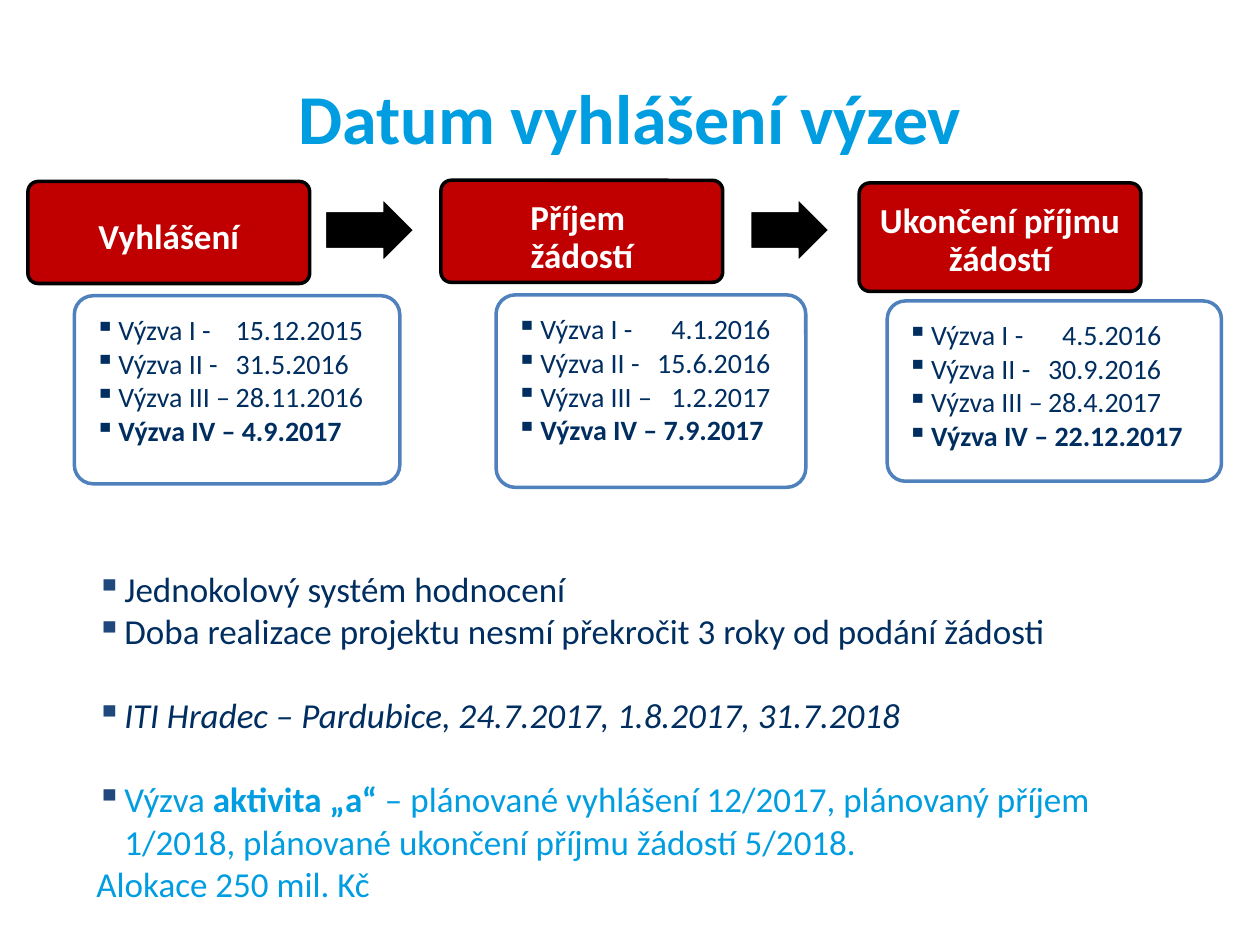
from dataclasses import dataclass
from typing import NamedTuple

from lxml import etree
from pptx import Presentation
from pptx.dml.color import RGBColor
from pptx.enum.shapes import MSO_SHAPE
from pptx.enum.text import MSO_ANCHOR, PP_ALIGN
from pptx.oxml.ns import qn
from pptx.util import Pt

ROUNDED, ARROW = MSO_SHAPE.ROUNDED_RECTANGLE, MSO_SHAPE.RIGHT_ARROW
TOP, MIDDLE = MSO_ANCHOR.TOP, MSO_ANCHOR.MIDDLE
LEFT, CENTER = PP_ALIGN.LEFT, PP_ALIGN.CENTER
TITLE_ONLY = 5


@dataclass(frozen=True)
class Theme:
    font: str = "Calibri"
    accent: str = "009DE0"
    navy: str = "002E60"
    bullet: str = "1F497D"
    red: str = "C00000"
    border: str = "4F81BD"
    black: str = "000000"
    white: str = "FFFFFF"
    title: float = 40
    large: float = 20
    small: float = 16


THEME = Theme()


class Box(NamedTuple):
    left: float
    top: float
    width: float
    height: float


class Tab(NamedTuple):
    pos: float
    align: str


class Stage(NamedTuple):
    heading: str
    header: Box
    header_inset: float
    card: Box
    tab: Tab
    dates: tuple[str, str, str]
    last_call: str


class Line(NamedTuple):
    phrases: tuple[tuple[str, dict], ...]
    bulleted: bool = True
    before: float = 0


STAGES = [
    Stage("Vyhlášení", Box(16, 103.7, 161, 58.3), 20,
          Box(42.5, 169, 186, 107.5), Tab(80.5, "l"),
          ("15.12.2015", "31.5.2016", "28.11.2016"), "4.9.2017"),
    Stage("Příjem \vžádostí", Box(252, 103, 161, 58.3), 9.8,
          Box(283.5, 168.5, 177, 110), Tab(145, "r"),
          ("4.1.2016", "15.6.2016", "1.2.2017"), "7.9.2017"),
    Stage("Ukončení příjmu žádostí", Box(491, 104.5, 161, 62), 9.8,
          Box(507, 172, 191, 103), Tab(145, "r"),
          ("4.5.2016", "30.9.2016", "28.4.2017"), "22.12.2017"),
]
CALLS = ("Výzva I -", "Výzva II -", "Výzva III –")
ARROWS = [Box(186, 113.8, 50.4, 35.3), Box(429, 113.8, 44.6, 35.3)]

BLUE = {"color": THEME.accent}
NOTES = [
    Line((("Jednokolový systém hodnocení", {}),)),
    Line((("Doba realizace projektu nesmí překročit 3 roky od podání žádosti", {}),)),
    Line((("ITI Hradec – Pardubice, 24.7.2017, 1.8.2017, 31.7.2018",
           {"italic": True}),), before=24),
    Line((("Výzva ", BLUE), ("aktivita „a“", {**BLUE, "bold": True}),
          (" – plánované vyhlášení 12/2017, plánovaný příjem 1/2018, "
           "plánované ukončení příjmu žádostí 5/2018.", BLUE)), before=24),
    Line((("Alokace 250 mil. Kč", BLUE),), bulleted=False),
]


def rgb(color: str) -> RGBColor:
    return RGBColor.from_string(color)


def add_text(p, text: str, *, size: float = THEME.large, color: str = THEME.navy,
             bold: bool = False, italic: bool = False) -> None:
    """Add text to a paragraph; a vertical tab becomes a line break."""
    for i, piece in enumerate(text.split("\v")):
        if i:
            p.add_line_break()
        r = p.add_run()
        r.text = piece
        r.font.name, r.font.size = THEME.font, Pt(size)
        r.font.bold, r.font.italic = bold, italic
        r.font.color.rgb = rgb(color)


def add_bullet(p, hang: float, color: str, tab: Tab | None = None) -> None:
    pPr = p._p.get_or_add_pPr()
    pPr.set("marL", str(Pt(hang)))
    pPr.set("indent", str(-Pt(hang)))
    bu_color = etree.SubElement(pPr, qn("a:buClr"))
    etree.SubElement(bu_color, qn("a:srgbClr"), val=color)
    etree.SubElement(pPr, qn("a:buChar"), char="▪")
    if tab:
        tabs = etree.SubElement(pPr, qn("a:tabLst"))
        etree.SubElement(tabs, qn("a:tab"), pos=str(Pt(tab.pos)), algn=tab.align)


def add_paragraph(tf, first: bool, align=LEFT):
    p = tf.paragraphs[0] if first else tf.add_paragraph()
    p.alignment = align
    return p


def set_frame(tf, left: float, top: float, right: float, bottom: float) -> None:
    tf.word_wrap = True
    tf.vertical_anchor = TOP
    tf.margin_left, tf.margin_top = Pt(left), Pt(top)
    tf.margin_right, tf.margin_bottom = Pt(right), Pt(bottom)


def add_shape(s, kind, box: Box, adjustments: tuple[float, ...], fill: str,
              line: str, weight: float):
    sp = s.shapes.add_shape(kind, *map(Pt, box))
    for i, value in enumerate(adjustments):
        sp.adjustments[i] = value
    sp.shadow.inherit = False
    sp.fill.solid()
    sp.fill.fore_color.rgb = rgb(fill)
    sp.line.color.rgb = rgb(line)
    sp.line.width = Pt(weight)
    return sp


def add_stage(s, stage: Stage) -> None:
    # Red heading
    sp = add_shape(s, ROUNDED, stage.header, (0.1,), THEME.red, THEME.black, 2)
    set_frame(sp.text_frame, 5, stage.header_inset, 5, 0)
    p = add_paragraph(sp.text_frame, True, CENTER)
    p.line_spacing = 0.9
    add_text(p, stage.heading, color=THEME.white, bold=True)

    # Card with the dates of the calls
    sp = add_shape(s, ROUNDED, stage.card, (0.1,), THEME.white, THEME.border, 2)
    fill = sp._element.spPr.find(qn("a:solidFill"))
    etree.SubElement(fill[0], qn("a:alpha"), val="90000")
    tf = sp.text_frame
    set_frame(tf, 8.6, 8.6, 0, 8.6)
    rows = [f"{call}\t{date}" for call, date in zip(CALLS, stage.dates)]
    rows.append(f"Výzva IV – {stage.last_call}")
    for i, row in enumerate(rows):
        p = add_paragraph(tf, i == 0)
        add_bullet(p, 13.5, THEME.navy, stage.tab)
        p.line_spacing, p.space_after = 0.9, Pt(2)
        add_text(p, row, size=THEME.small, bold=i == len(CALLS))


def add_notes(s, box: Box) -> None:
    tf = s.shapes.add_textbox(*map(Pt, box)).text_frame
    set_frame(tf, 7.2, 3.6, 7.2, 3.6)
    for i, line in enumerate(NOTES):
        p = add_paragraph(tf, i == 0)
        if line.bulleted:
            add_bullet(p, 16, THEME.bullet)
        if line.before:
            p.space_before = Pt(line.before)
        for text, style in line.phrases:
            add_text(p, text, **style)


def main() -> None:
    prs = Presentation()
    prs.slide_width, prs.slide_height = Pt(720), Pt(540)
    s = prs.slides.add_slide(prs.slide_layouts[TITLE_ONLY])

    # Title
    title = s.shapes.title
    title.left, title.top, title.width, title.height = map(Pt, Box(36, 21.6, 648, 90))
    title.text_frame.vertical_anchor = MIDDLE
    p = add_paragraph(title.text_frame, True, CENTER)
    add_text(p, "Datum vyhlášení výzev", size=THEME.title, color=THEME.accent, bold=True)

    # Three stages joined by arrows
    for stage in STAGES:
        add_stage(s, stage)
    for box in ARROWS:
        add_shape(s, ARROW, box, (0.6, 0.5), THEME.black, THEME.white, 0.75)

    # Notes below
    add_notes(s, Box(48, 321, 636, 216))
    prs.save("out.pptx")


if __name__ == "__main__":
    main()
